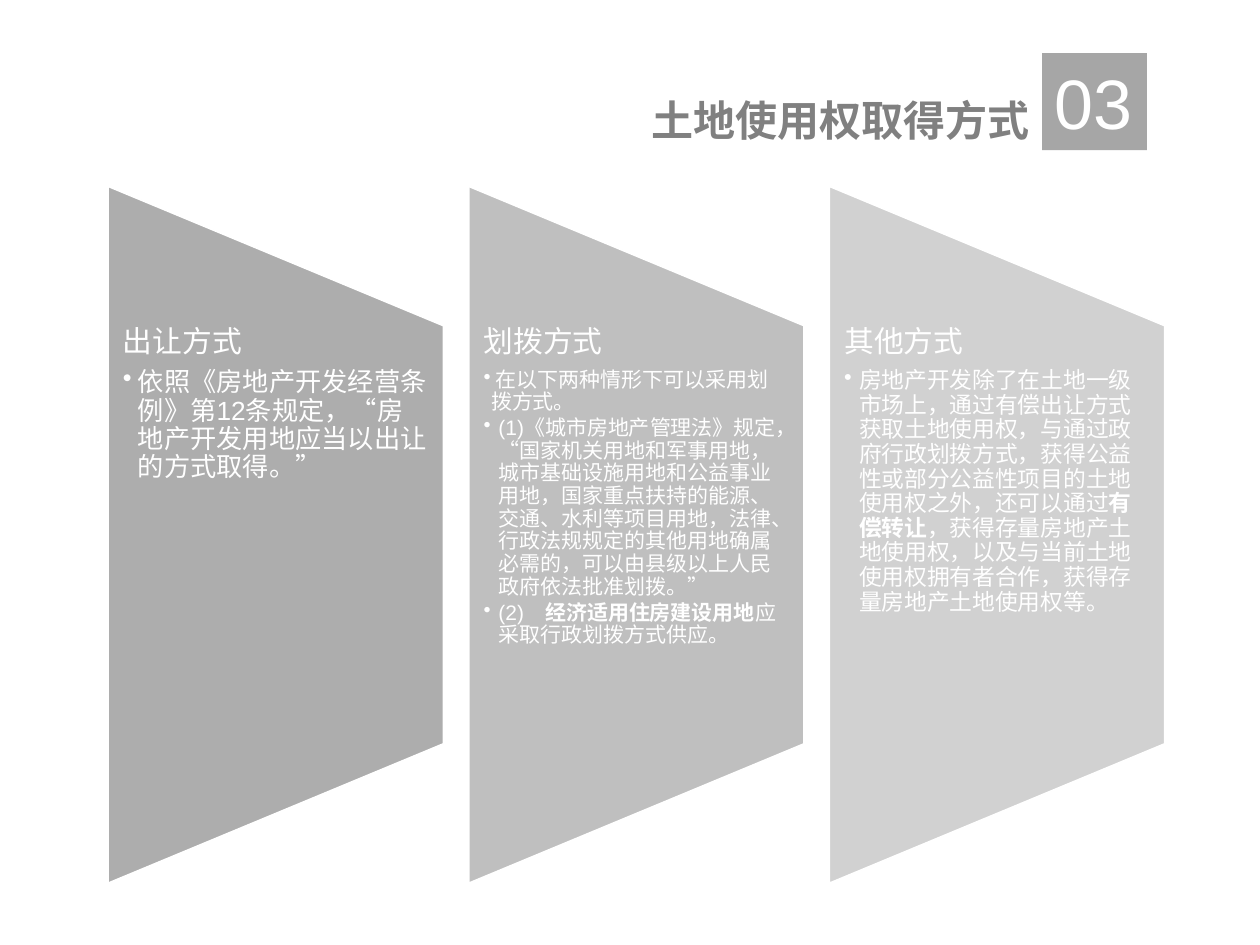
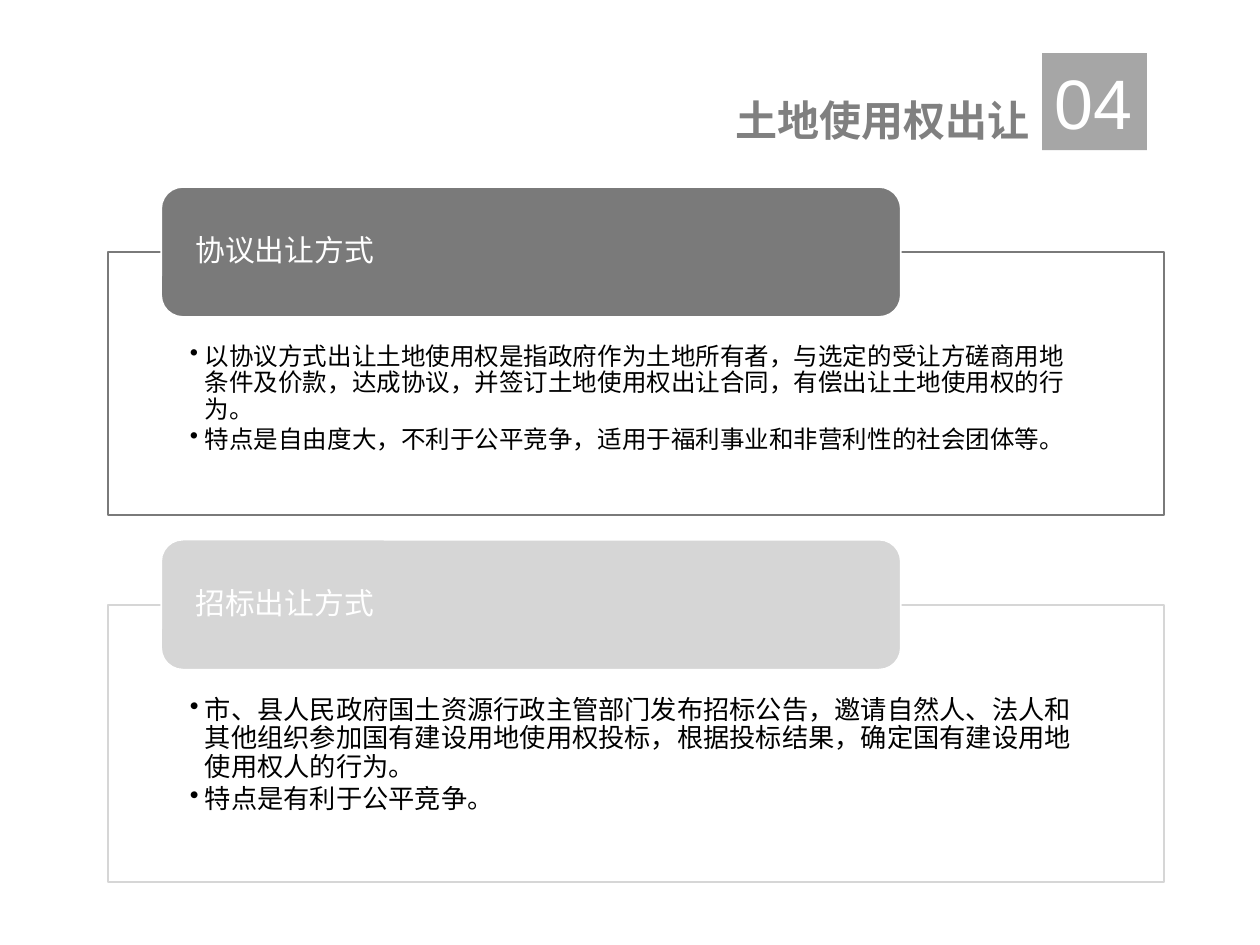
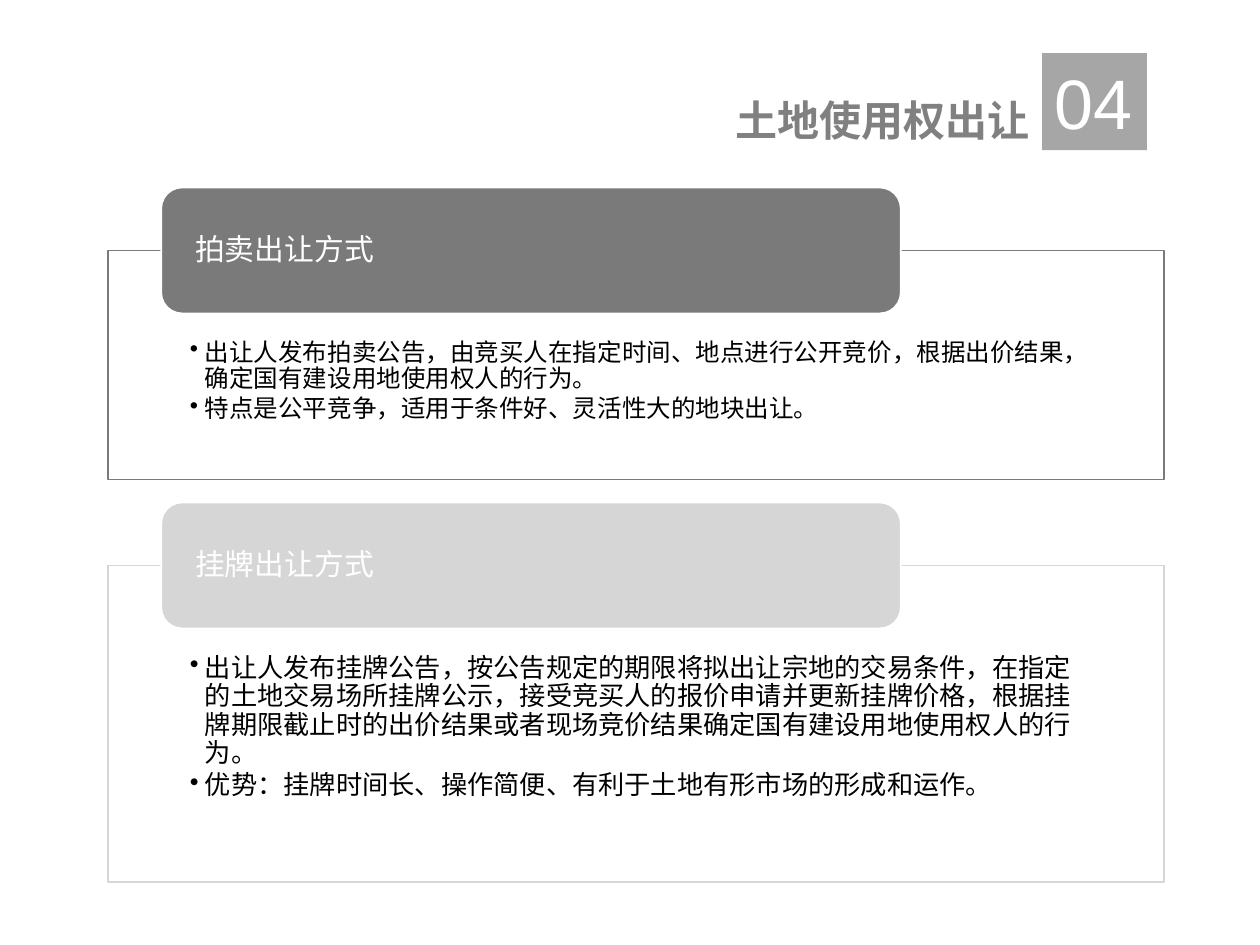
from lxml.etree import SubElement
from pptx import Presentation
from pptx.dml.color import RGBColor
from pptx.enum.shapes import MSO_SHAPE
from pptx.enum.text import MSO_ANCHOR, PP_ALIGN
from pptx.oxml.ns import qn
from pptx.util import Cm, Pt

HUES = {
    "white": "FFFFFF",
    "black": "000000",
    "title": "808080",
    "badge": "A6A6A6",
    "column": "A5A5A5",
    "dark": "7A7A7A",
    "light": "D6D6D6",
}
LATIN = "Arial"
HAN = "Noto Sans CJK SC"
HANG = 0.3

WAYS = [
    ("出让方式", 90, 15, [
        (HANG, "依照《房地产开发经营条例》第12条规定，“房地产开发用地应当以出让的方式取得。”"),
    ]),
    ("划拨方式", 70, 12, [
        (HANG / 2, " 在以下两种情形下可以采用划拨方式。"),
        (HANG, "(1)《城市房地产管理法》规定，“国家机关用地和军事用地，城市基础设施用地和公益事业用地，"
               "国家重点扶持的能源、交通、水利等项目用地，法律、行政法规规定的其他用地确属必需的，"
               "可以由县级以上人民政府依法批准划拨。”"),
        (HANG, "(2)　", "经济适用住房建设用地", "应采取行政划拨方式供应。"),
    ]),
    ("其他方式", 50, 13, [
        (HANG, "房地产开发除了在土地一级市场上，通过有偿出让方式获取土地使用权，与通过政府行政划拨方式，"
               "获得公益性或部分公益性项目的土地使用权之外，还可以通过",
         "有偿转让",
         "，获得存量房地产土地使用权，以及与当前土地使用权拥有者合作，获得存量房地产土地使用权等。"),
    ]),
]

SALES = [
    (2.62, [
        ("协议出让方式", "dark", 5.08, 5.31, 14, [
            (HANG, "以协议方式出让土地使用权是指政府作为土地所有者，与选定的受让方磋商用地条件及价款，"
                   "达成协议，并签订土地使用权出让合同，有偿出让土地使用权的行为。"),
            (HANG, "特点是自由度大，不利于公平竞争，适用于福利事业和非营利性的社会团体等。"),
        ]),
        ("招标出让方式", "light", 12.19, 5.59, 15, [
            (HANG, "市、县人民政府国土资源行政主管部门发布招标公告，邀请自然人、法人和其他组织参加"
                   "国有建设用地使用权投标，根据投标结果，确定国有建设用地使用权人的行为。"),
            (HANG, "特点是有利于公平竞争。"),
        ]),
    ]),
    (2.54, [
        ("拍卖出让方式", "dark", 5.05, 4.62, 14, [
            (HANG, "出让人发布拍卖公告，由竞买人在指定时间、地点进行公开竞价，根据出价结果，"
                   "确定国有建设用地使用权人的行为。"),
            (HANG, "特点是公平竞争，适用于条件好、灵活性大的地块出让。"),
        ]),
        ("挂牌出让方式", "light", 11.4, 6.38, 15, [
            (HANG, "出让人发布挂牌公告，按公告规定的期限将拟出让宗地的交易条件，在指定的土地交易场所"
                   "挂牌公示，接受竞买人的报价申请并更新挂牌价格，根据挂牌期限截止时的出价结果"
                   "或者现场竞价结果确定国有建设用地使用权人的行为。"),
            (HANG, "优势：挂牌时间长、操作简便、有利于土地有形市场的形成和运作。"),
        ]),
    ]),
]


class Deck:
    def __init__(self):
        self.show = Presentation()
        self.show.slide_width = Cm(25.4)
        self.show.slide_height = Cm(19.05)
        self.slide = None

    def color(self, name):
        return RGBColor.from_string(HUES[name])

    def page(self, title, number):
        self.slide = self.show.slides.add_slide(self.show.slide_layouts[6])
        head = self.label(10.97, 1.78, 10.03, 1.27)
        self.para(head, [title], 24, "title", HAN, True).alignment = PP_ALIGN.RIGHT
        badge = self.shape(MSO_SHAPE.RECTANGLE, 21.01, 1.07, 2.11, 1.96, "badge")
        frame = self.inset(badge, 0.25, 0.13)
        frame.word_wrap = False
        self.para(frame, [number], 40, "white")

    def shape(self, kind, x, y, w, h, fill, line=None):
        item = self.slide.shapes.add_shape(kind, Cm(x), Cm(y), Cm(w), Cm(h))
        item.shadow.inherit = False
        item.fill.solid()
        item.fill.fore_color.rgb = self.color(fill)
        if line:
            item.line.color.rgb = self.color(line)
            item.line.width = Pt(1)
        else:
            item.line.fill.background()
        return item

    def label(self, x, y, w, h, side=0.25, top=0.13):
        box = self.slide.shapes.add_textbox(Cm(x), Cm(y), Cm(w), Cm(h))
        return self.inset(box, side, top)

    def inset(self, item, side, top, anchor=MSO_ANCHOR.TOP):
        frame = item.text_frame
        frame.word_wrap = True
        frame.vertical_anchor = anchor
        frame.margin_left = frame.margin_right = Cm(side)
        frame.margin_top = Cm(top)
        frame.margin_bottom = 0
        return frame

    def para(self, frame, runs, size, color, font=LATIN, bold=False):
        first = frame.paragraphs[0]
        para = frame.add_paragraph() if first.runs else first
        para.alignment = PP_ALIGN.LEFT
        for spot, text in enumerate(runs):
            run = para.add_run()
            run.text = text
            run.font.size = Pt(size)
            run.font.bold = bold or spot % 2 == 1
            run.font.color.rgb = self.color(color)
            run.font.name = font
            props = run.font._element
            props.set("lang", "zh-CN")
            SubElement(props, qn("a:ea")).set("typeface", HAN)
        return para

    def space(self, para, after):
        para.line_spacing = 0.9
        para.space_before = Pt(0)
        para.space_after = Pt(after)

    def heading(self, frame, text):
        self.space(self.para(frame, [text], 17, "white"), 6)

    def bullets(self, frame, items, size, color):
        for hang, *runs in items:
            para = self.para(frame, runs, size, color)
            para.level = 1
            self.space(para, size * 0.15)
            props = para._p.get_or_add_pPr()
            props.set("marL", str(Cm(hang)))
            props.set("indent", str(-Cm(hang)))
            SubElement(props, qn("a:buChar")).set("char", "•")

    def column(self, x, title, alpha, size, items):
        w, h, y, mid = 6.76, 14.05, 6.58, 10.78
        blade = self.shape(MSO_SHAPE.FLOWCHART_MANUAL_OPERATION,
                           x + (w - h) / 2, mid - w / 2, h, w, "column", "white")
        blade.rotation = 270
        tint = blade.fill._xPr.find(qn("a:solidFill"))[0]
        SubElement(tint, qn("a:alpha")).set("val", str(alpha * 1000))
        frame = self.label(x, y, w, 8.43, 0.3, 0)
        self.heading(frame, title)
        self.bullets(frame, items, size, "white")

    def panel(self, tall, title, hue, y, h, size, items):
        body = self.shape(MSO_SHAPE.RECTANGLE, 2.18, y, 21.29, h, "white", hue)
        self.bullets(self.inset(body, 1.65, tall * 0.71), items, size, "black")
        tab = self.shape(MSO_SHAPE.ROUNDED_RECTANGLE, 3.25, y - tall / 2, 14.91, tall, hue, "white")
        self.heading(self.inset(tab, 0.56, 0, MSO_ANCHOR.MIDDLE), title)


def main():
    deck = Deck()
    deck.page("土地使用权取得方式", "03")
    for spot, way in enumerate(WAYS):
        deck.column(2.18 + spot * 7.27, *way)
    for tall, panels in SALES:
        deck.page("土地使用权出让", "04")
        for panel in panels:
            deck.panel(tall, *panel)
    deck.show.save("out.pptx")


if __name__ == "__main__":
    main()
